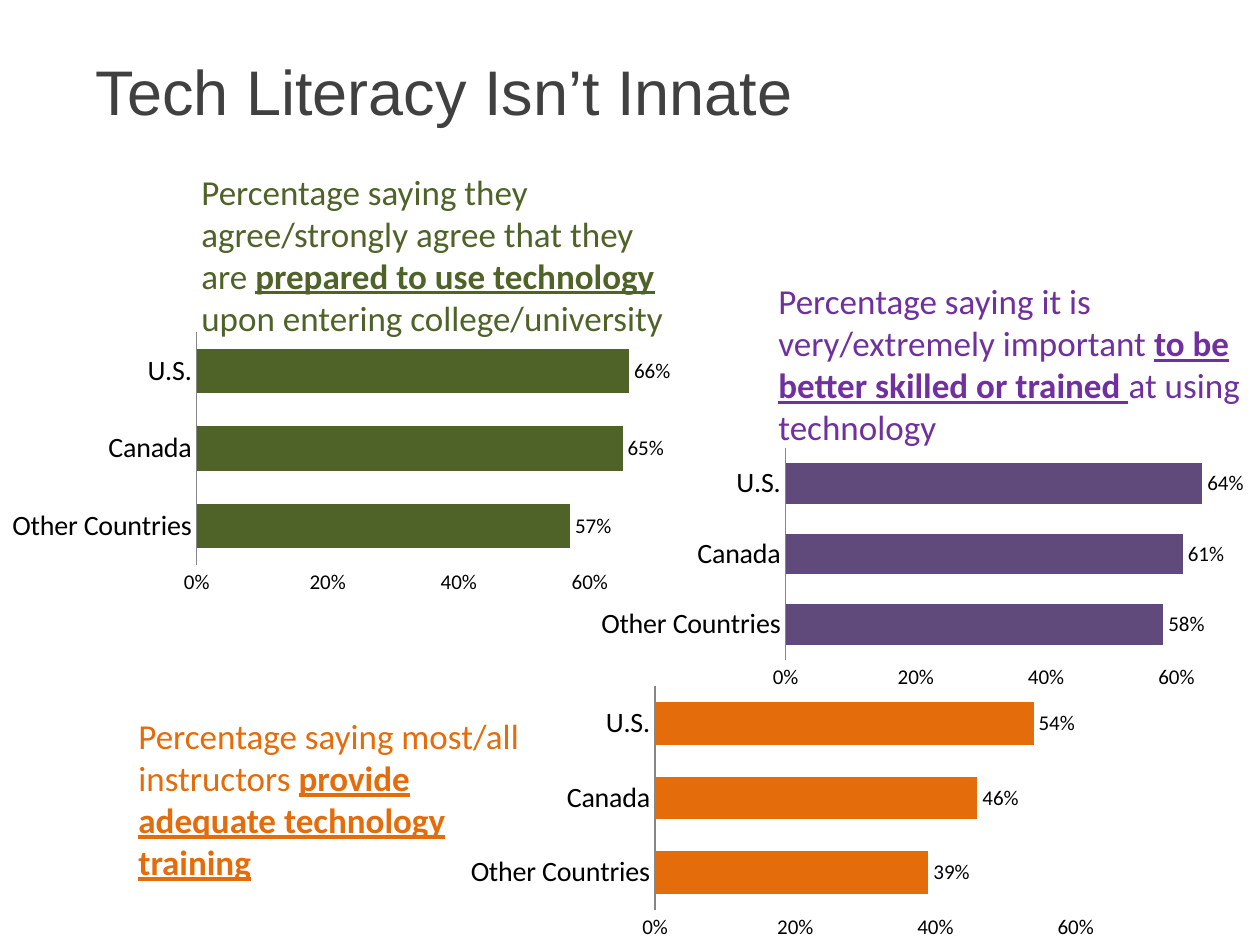
from lxml import etree
from pptx import Presentation
from pptx.chart.data import CategoryChartData
from pptx.dml.color import RGBColor
from pptx.enum.chart import XL_CHART_TYPE, XL_LABEL_POSITION, XL_TICK_MARK
from pptx.enum.text import MSO_ANCHOR, PP_ALIGN
from pptx.oxml import parse_xml
from pptx.oxml.ns import nsdecls
from pptx.util import Inches, Pt

COLORS = {
    "title": "404040", "text": "000000", "axis": "868686",
    "green": "4F6228", "purple_bar": "604A7B", "purple_text": "7030A0",
    "orange": "E46C0A",
}
COLUMNS, ROWS = 100, 75
SLIDE_WIDTH, SLIDE_HEIGHT = Inches(10), Inches(7.5)
COUNTRIES = ["Other Countries", "Canada", "U.S."]

# Boxes are (left, top, width, height) in grid columns and rows;
# plot areas are percentages of their chart's box.
PANELS = [
    dict(chart_box=(36.2, 54.1, 55.8, 20.9), plot=(28.3, 1.8, 69.8, 84.8),
         values=[0.39, 0.46, 0.54], bar="orange",
         text_box=(10, 56.2, 34.2, 14.5), ink="orange",
         wording=("Percentage saying most/all instructors ",
                  "provide adequate technology training", "")),
    dict(chart_box=(46.7, 35.2, 52.9, 20), plot=(29.6, 1.9, 68.4, 84),
         values=[0.58, 0.61, 0.64], bar="purple_bar",
         text_box=(60.8, 21.7, 40.4, 14.5), ink="purple_text",
         wording=("Percentage saying it is very/extremely important ",
                  "to be better skilled or trained ", "at using technology")),
    dict(chart_box=(0, 25.9, 53.3, 21.7), plot=(29.3, 2.2, 68.3, 85),
         values=[0.57, 0.65, 0.66], bar="green",
         text_box=(15, 13, 39.4, 14.5), ink="green",
         wording=("Percentage saying they agree/strongly agree that they are ",
                  "prepared to use technology ",
                  "upon entering college/university")),
]


def grid(box):
    """Turn a box in columns and rows into slide lengths."""
    left, top, width, height = box
    return (int(SLIDE_WIDTH * left / COLUMNS), int(SLIDE_HEIGHT * top / ROWS),
            int(SLIDE_WIDTH * width / COLUMNS), int(SLIDE_HEIGHT * height / ROWS))


def rgb(name):
    return RGBColor.from_string(COLORS[name])


def format_font(font, size, color="text", name="Calibri"):
    font.size, font.name = Pt(size), name
    font.color.rgb = rgb(color)


def add_run(paragraph, text, *, size, color, font="Calibri", emphasis=False):
    run = paragraph.add_run()
    run.text = text
    format_font(run.font, size, color, font)
    run.font.bold = run.font.underline = emphasis


def place_title(slide, box):
    title = slide.shapes.title
    title.left, title.top, title.width, title.height = grid(box)
    title.text_frame.vertical_anchor = MSO_ANCHOR.TOP
    paragraph = title.text_frame.paragraphs[0]
    paragraph.alignment = PP_ALIGN.LEFT
    add_run(paragraph, "Tech Literacy Isn’t Innate", size=36, color="title", font="Arial")


def add_caption(slide, box, wording, color):
    """Add a caption whose middle part is emphasised."""
    frame = slide.shapes.add_textbox(*grid(box)).text_frame
    frame.word_wrap = True
    for index, text in enumerate(wording):
        if text:
            add_run(frame.paragraphs[0], text, size=20, color=color, emphasis=index == 1)


def fix_plot_area(chart, plot):
    """Pin the inner plot area to the given percentages of the chart."""
    plot_area = chart.plots[0]._element.getparent()
    for old in plot_area.findall("{*}layout"):
        plot_area.remove(old)
    layout = parse_xml(f"<c:layout {nsdecls('c')}><c:manualLayout/></c:layout>")
    settings = [("layoutTarget", "inner"), ("xMode", "edge"), ("yMode", "edge")]
    settings += [(tag, percent / 100) for tag, percent in zip("xywh", plot)]
    for tag, value in settings:
        child = etree.SubElement(layout[0], layout.tag.replace("layout", tag))
        child.set("val", str(value))
    plot_area.insert(0, layout)


def add_bar_chart(slide, box, plot, values, color):
    data = CategoryChartData(number_format="0%")
    data.categories = COUNTRIES
    data.add_series("Series 1", values)
    chart = slide.shapes.add_chart(XL_CHART_TYPE.BAR_CLUSTERED, *grid(box), data).chart
    chart.has_legend = chart.has_title = False
    format_font(chart.font, 18)
    fix_plot_area(chart, plot)

    for axis, size in ((chart.category_axis, 16), (chart.value_axis, 12)):
        axis.major_tick_mark = axis.minor_tick_mark = XL_TICK_MARK.NONE
        axis.has_major_gridlines = False
        format_font(axis.tick_labels.font, size)
    chart.category_axis.format.line.color.rgb = rgb("axis")
    chart.category_axis.format.line.width = Pt(0.75)
    value_axis = chart.value_axis
    value_axis.minimum_scale, value_axis.maximum_scale = 0, 0.7
    value_axis.major_unit = 0.2
    value_axis.tick_labels.number_format = "0%"
    value_axis.tick_labels.number_format_is_linked = False
    value_axis.format.line.fill.background()

    bars = chart.plots[0]
    bars.gap_width, bars.overlap, bars.vary_by_categories = 75, -25, False
    fill = bars.series[0].format.fill
    fill.solid()
    fill.fore_color.rgb = rgb(color)
    bars.has_data_labels = True
    labels = bars.data_labels
    labels.show_value = True
    labels.position = XL_LABEL_POSITION.OUTSIDE_END
    labels.number_format, labels.number_format_is_linked = "0%", False
    format_font(labels.font, 12)


def add_panel(slide, panel):
    add_bar_chart(slide, panel["chart_box"], panel["plot"], panel["values"], panel["bar"])
    add_caption(slide, panel["text_box"], panel["wording"], panel["ink"])


def main():
    presentation = Presentation()
    presentation.slide_width, presentation.slide_height = SLIDE_WIDTH, SLIDE_HEIGHT
    slide = presentation.slides.add_slide(presentation.slide_layouts[5])
    place_title(slide, (6.6, 3.7, 87.7, 8))
    for panel in PANELS:
        add_panel(slide, panel)
    presentation.save("out.pptx")


if __name__ == "__main__":
    main()
